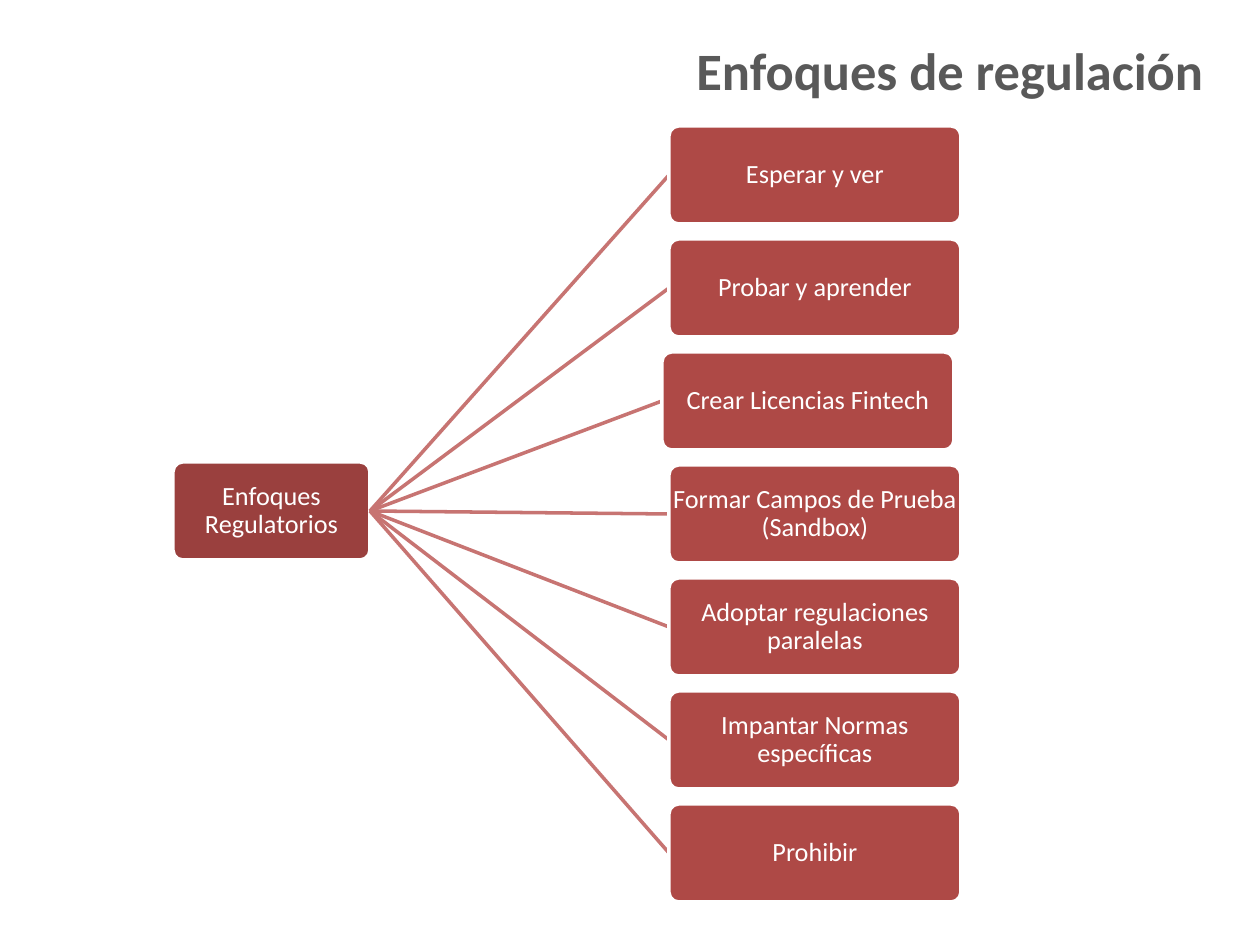
from lxml import etree
from pptx import Presentation
from pptx.dml.color import RGBColor
from pptx.enum.shapes import MSO_CONNECTOR, MSO_SHAPE
from pptx.enum.text import MSO_ANCHOR, PP_ALIGN
from pptx.oxml.ns import qn
from pptx.util import Pt

PX = 914400 / 126
ROUNDED = MSO_SHAPE.ROUNDED_RECTANGLE
STRAIGHT = MSO_CONNECTOR.STRAIGHT
MIDDLE = MSO_ANCHOR.MIDDLE
CENTER = PP_ALIGN.CENTER
RIGHT = PP_ALIGN.RIGHT
LEFT_SIDE, RIGHT_SIDE = 1, 3
BOX_HEIGHT = 98
BRANCH_LEFT, BRANCH_TOP, BRANCH_WIDTH, BRANCH_STEP = 669, 126, 292, 113


def color(value):
    return RGBColor.from_string(value)


def add_box(text, left, top, width, fill):
    shape = slide.shapes.add_shape(
        ROUNDED, *[round(n * PX) for n in (left, top, width, BOX_HEIGHT)])
    shape.adjustments[0] = 0.1
    shape.shadow.inherit = False
    shape.fill.solid()
    shape.fill.fore_color.rgb = color(fill)
    shape.line.color.rgb = color("FFFFFF")
    shape.line.width = Pt(2)
    frame = shape.text_frame
    frame.word_wrap = True
    frame.vertical_anchor = MIDDLE
    frame.margin_left = frame.margin_right = 0
    frame.margin_top = frame.margin_bottom = 0
    frame.text = text
    paragraph = frame.paragraphs[0]
    paragraph.alignment = CENTER
    paragraph.line_spacing = 0.9
    font = paragraph.runs[0].font
    font.name = "Calibri"
    font.size = Pt(15)
    font.color.rgb = color("FFFFFF")
    return shape


presentation = Presentation()
presentation.slide_width = round(1260 * PX)
presentation.slide_height = round(945 * PX)
slide = presentation.slides.add_slide(presentation.slide_layouts[6])

root = add_box("Enfoques Regulatorios", 173, 462, 197, "9A403E")

branches = [
    ("Esperar y ver", 0),
    ("Probar y aprender", 0),
    ("Crear Licencias Fintech", -7),
    ("Formar Campos de Prueba (Sandbox)", 0),
    ("Adoptar regulaciones paralelas", 0),
    ("Impantar Normas específicas", 0),
    ("Prohibir", 0),
]
for index, (text, shift) in enumerate(branches):
    connector = slide.shapes.add_connector(STRAIGHT, 0, 0, 0, 0)
    connector.line.color.rgb = color("C77472")
    connector.line.width = Pt(2)
    etree.SubElement(connector._element.spPr, qn("a:effectLst"))
    branch = add_box(text, BRANCH_LEFT + shift, BRANCH_TOP + index * BRANCH_STEP,
                     BRANCH_WIDTH, "AE4946")
    connector.begin_connect(root, RIGHT_SIDE)
    connector.end_connect(branch, LEFT_SIDE)

title = slide.shapes.add_textbox(*[round(n * PX) for n in (346, 32, 870, 77)])
title.text_frame.word_wrap = True
title.text_frame.text = "Enfoques de regulación"
paragraph = title.text_frame.paragraphs[0]
paragraph.alignment = RIGHT
font = paragraph.runs[0].font
font.name = "Calibri"
font.size = Pt(30)
font.bold = True
font.color.rgb = color("595959")

presentation.save("out.pptx")
